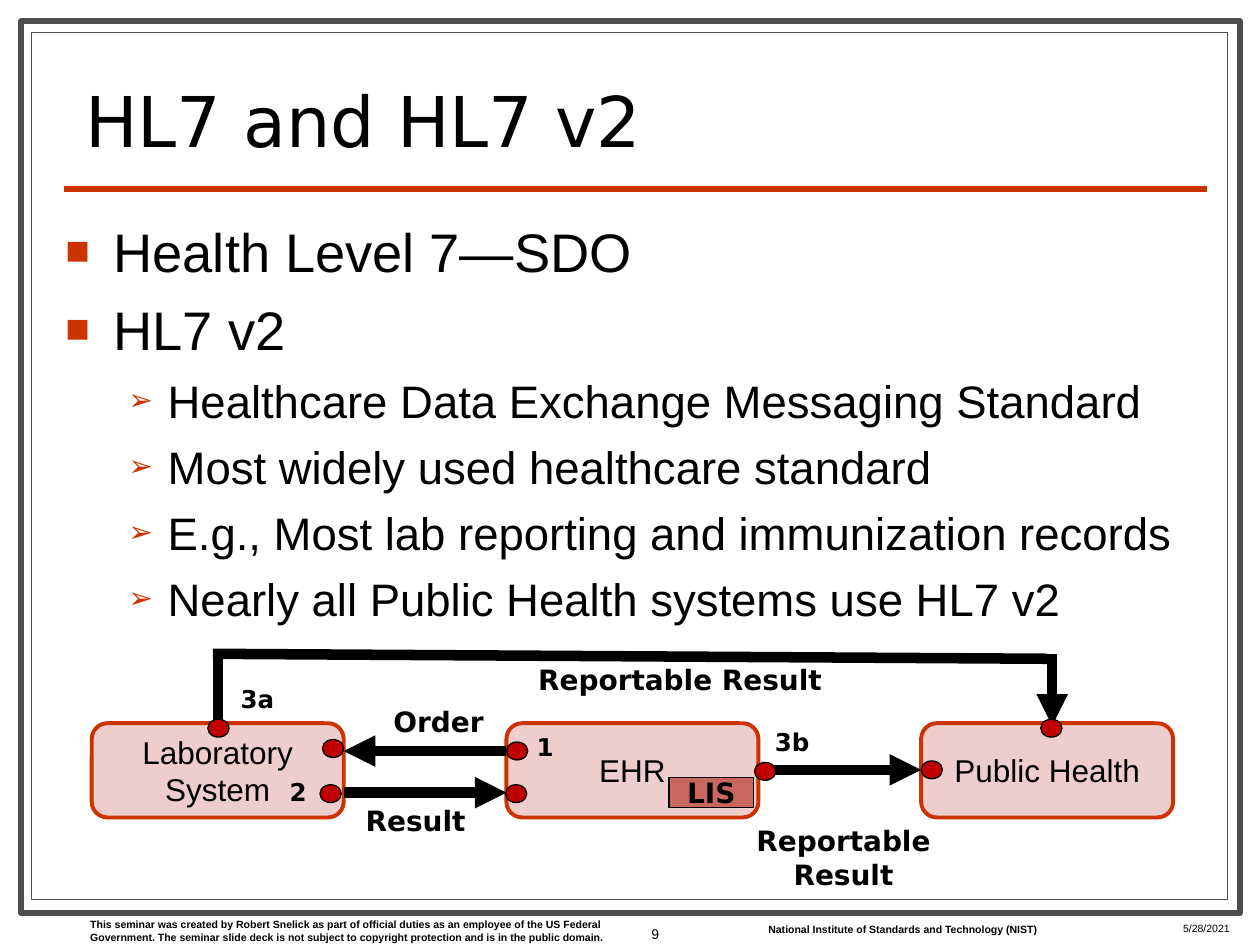
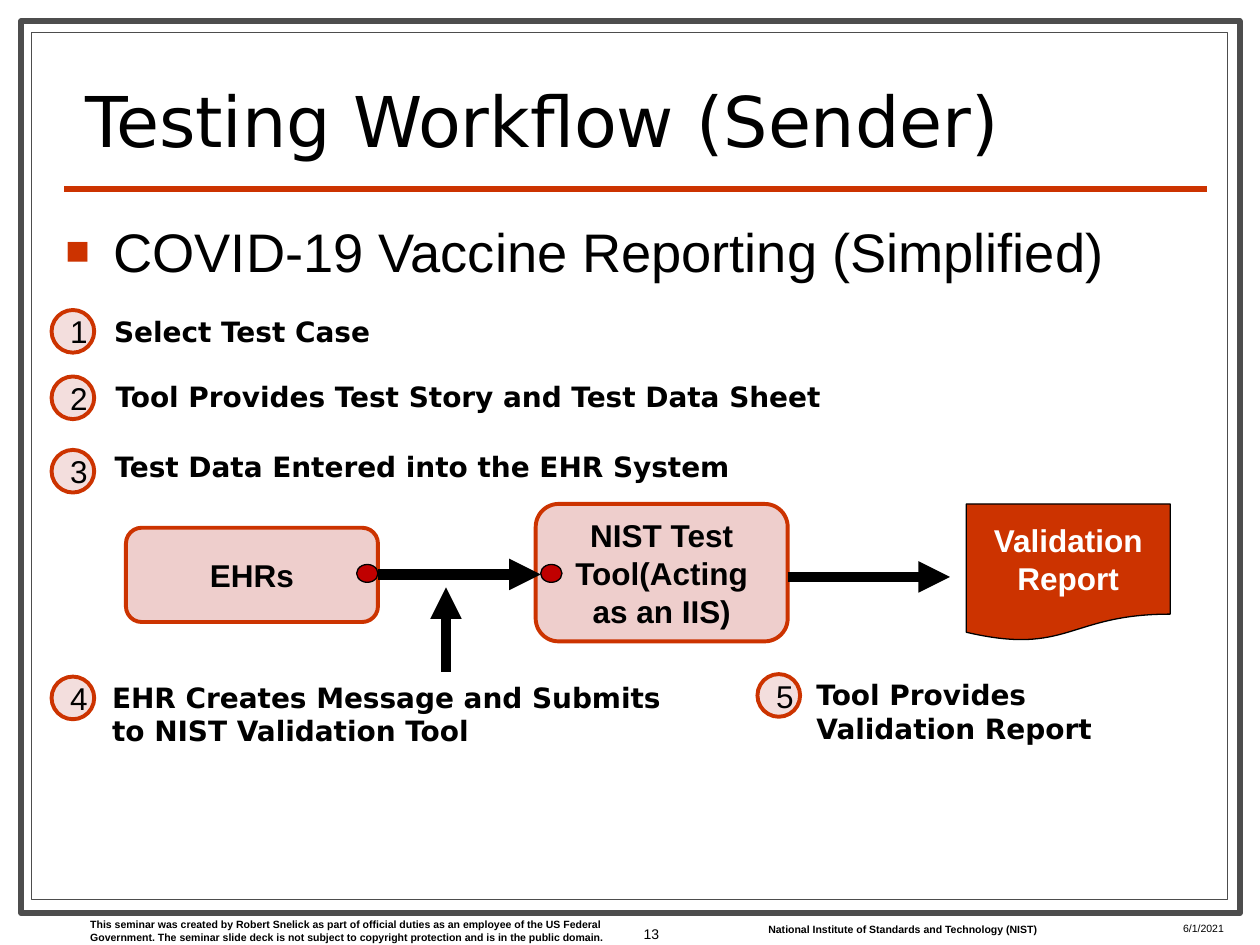
from lxml import etree
from pptx import Presentation
from pptx import util as u
from pptx.dml.color import RGBColor
from pptx.enum import shapes, text
from pptx.oxml import ns

BLACK, WHITE, ACCENT, GREY = "000000", "FFFFFF", "CC3300", "4D4D4D"
NODE, STEP, PORT, INNER = "EECECC", "F3DEDD", "C00000", "C96660"
SANS, DISPLAY = "Arial", "DejaVu Sans"
KIND = shapes.MSO_SHAPE
LEFT, CENTER, RIGHT = text.PP_ALIGN.LEFT, text.PP_ALIGN.CENTER, text.PP_ALIGN.RIGHT
TOP, MIDDLE, BOTTOM = text.MSO_ANCHOR.TOP, text.MSO_ANCHOR.MIDDLE, text.MSO_ANCHOR.BOTTOM
DISCLAIMER = (
    "This seminar was created by Robert Snelick as part of official duties as an employee "
    "of the US Federal Government. The seminar slide deck is not subject to copyright "
    "protection and is in the public domain."
)
INSTITUTE = "National Institute of Standards and Technology (NIST)"
LEVELS = [
    {"bullet": "■", "percent": 75, "margin": 0.97, "hang": 0.97, "size": 31, "before": 7.5},
    {"bullet": "➢", "percent": 65, "margin": 2.06, "hang": 0.79, "size": 26, "before": 6.5},
]


def color(value):
    """Turn a hex string into a colour."""
    return RGBColor.from_string(value)


def lengths(*values):
    """Turn centimetre numbers into lengths."""
    return [u.Cm(value) for value in values]


class Deck:
    """Hold the shared style and the current slide."""

    def __init__(self):
        """Start an empty 4:3 presentation."""
        self.presentation = Presentation()
        self.presentation.slide_width, self.presentation.slide_height = lengths(25.4, 19.05)
        self.slide = None

    def new_slide(self, title, number, date):
        """Add a slide with its frame, title, rule and footer."""
        self.slide = self.presentation.slides.add_slide(self.presentation.slide_layouts[6])
        self.shape(KIND.RECTANGLE, (0.43, 0.43, 24.56, 17.98), WHITE, GREY, 3.5)
        self.shape(KIND.RECTANGLE, (0.64, 0.66, 24.1, 17.48), WHITE, GREY, 0.75)
        self.line((1.3, 3.81), (24.33, 3.81), ACCENT, 3)
        self.label(DISCLAIMER, (1.57, 18.39, 11, 0.76), 6, SANS)
        self.label(INSTITUTE, (15.24, 18.49, 6.05, 0.51), 6, SANS)
        heading = self.label(title, (1.47, 1.07, 22.66, 2.29), 40, bold=False, anchor=BOTTOM)
        heading.text_frame.paragraphs[0].line_spacing = 0.8
        self.label(date, (23.6, 18.47, 1.6, 0.41), 6, SANS, bold=False)
        self.label(number, (12.07, 18.16, 1.47, 1.32), 8, SANS, False, RIGHT, MIDDLE)

    def set_text(self, shape, content, size, font, bold, fill, align, anchor):
        """Fill a shape with one formatted paragraph."""
        frame = shape.text_frame
        frame.word_wrap = True
        frame.vertical_anchor = anchor
        frame.text = content
        paragraph = frame.paragraphs[0]
        paragraph.alignment = align
        self.style(paragraph.runs[0].font, size, font, bold, fill)

    def style(self, run_font, size, font, bold=False, fill=BLACK):
        """Format the font of a run."""
        run_font.size, run_font.name, run_font.bold = u.Pt(size), font, bold
        run_font.color.rgb = color(fill)

    def label(self, content, box, size=16, font=DISPLAY, bold=True, align=LEFT, anchor=TOP):
        """Add a text box."""
        shape = self.slide.shapes.add_textbox(*lengths(*box))
        self.set_text(shape, content, size, font, bold, BLACK, align, anchor)
        return shape

    def marker(self, content, left, top):
        """Add a short message number beside a port."""
        shape = self.label(content, (left, top, 0.51 + 0.35 * len(content), 0.86), 14)
        shape.text_frame.word_wrap = False

    def shape(self, kind, box, fill, line, width, content="", size=18, font=SANS,
              bold=False, ink=BLACK):
        """Add a filled and outlined preset shape."""
        shape = self.slide.shapes.add_shape(kind, *lengths(*box))
        shape.shadow.inherit = False
        shape.fill.solid()
        shape.fill.fore_color.rgb = color(fill)
        shape.line.color.rgb = color(line)
        shape.line.width = u.Pt(width)
        if content:
            self.set_text(shape, content, size, font, bold, ink, CENTER, MIDDLE)

    def node(self, content, left, top, height=1.9, bold=False):
        """Add a rounded system box."""
        self.shape(KIND.ROUNDED_RECTANGLE, (left, top, 5.08, height), NODE, ACCENT, 2.25,
                   content, bold=bold)

    def port(self, left, top):
        """Add a red connection point."""
        self.shape(KIND.OVAL, (left, top, 0.43, 0.36), PORT, BLACK, 0.75)

    def step(self, number, left, top):
        """Add a numbered step circle."""
        self.shape(KIND.OVAL, (left, top, 0.86, 0.86), STEP, ACCENT, 2.25, number)

    def line(self, start, end, fill=BLACK, width=6, arrow=False):
        """Add a straight line, with an arrowhead on request."""
        connector = self.slide.shapes.add_connector(
            shapes.MSO_CONNECTOR.STRAIGHT, *lengths(*start, *end))
        connector.line.color.rgb = color(fill)
        connector.line.width = u.Pt(width)
        properties = connector._element.spPr
        if arrow:
            etree.SubElement(properties.find(ns.qn("a:ln")), ns.qn("a:tailEnd"), type="triangle")
        etree.SubElement(properties, ns.qn("a:effectLst"))

    def arrow(self, start, end):
        """Add a thick message arrow."""
        self.line(start, end, arrow=True)

    def bullets(self, items, height):
        """Add the body list from pairs of level and text."""
        frame = self.slide.shapes.add_textbox(*lengths(1.07, 4.27, 23.29, height)).text_frame
        frame.word_wrap = True
        frame.text = "\n".join(content for _, content in items)
        for index, (paragraph, (level, _)) in enumerate(zip(frame.paragraphs, items)):
            look = LEVELS[level]
            paragraph.level = level
            properties = paragraph._p.get_or_add_pPr()
            properties.set("marL", str(u.Cm(look["margin"])))
            properties.set("indent", str(-u.Cm(look["hang"])))
            tint = etree.SubElement(properties, ns.qn("a:buClr"))
            etree.SubElement(tint, ns.qn("a:srgbClr"), val=ACCENT)
            etree.SubElement(properties, ns.qn("a:buSzPct"), val=str(look["percent"] * 1000))
            etree.SubElement(properties, ns.qn("a:buFont"), typeface=SANS)
            etree.SubElement(properties, ns.qn("a:buChar"), char=look["bullet"])
            if index:
                paragraph.space_before = u.Pt(look["before"])
            self.style(paragraph.runs[0].font, look["size"], SANS)


def standard_slide(deck):
    """Build the slide on the messaging standard."""
    deck.new_slide("HL7 and HL7 v2", "9", "5/28/2021")
    deck.bullets([
        (0, "Health Level 7—SDO"),
        (0, "HL7 v2"),
        (1, "Healthcare Data Exchange Messaging Standard"),
        (1, "Most widely used healthcare standard"),
        (1, "E.g., Most lab reporting and immunization records"),
        (1, "Nearly all Public Health systems use HL7 v2"),
    ], 8.5)
    for index, system in enumerate(["Laboratory System", "EHR", "Public Health"]):
        deck.node(system, 1.85 + 8.36 * index, 14.58)
    for start, end in [
        ((15.29, 15.52), (18.57, 15.52)),
        ((21.21, 13.18), (21.21, 14.63)),
        ((10.21, 15.14), (6.93, 15.14)),
        ((6.93, 15.98), (10.21, 15.98)),
    ]:
        deck.arrow(start, end)
    deck.line((4.29, 13.18), (21.11, 13.28))
    deck.line((4.39, 13.11), (4.39, 14.58))
    for message, box in [
        ("Order", (7.67, 14.07, 2.34, 0.94)),
        ("Result", (7.06, 16.08, 2.64, 0.94)),
        ("Reportable Result", (14.86, 16.48, 4.29, 1.63)),
        ("Reportable Result", (10.08, 13.23, 7.26, 0.94)),
    ]:
        deck.label(message, box, align=CENTER)
    deck.shape(KIND.RECTANGLE, (13.49, 15.67, 1.7, 0.61), INNER, BLACK, 0.75, "LIS", 16,
               DISPLAY, True)
    for left, top in [(6.5, 14.91), (6.45, 15.82), (10.19, 15.82), (15.21, 15.37),
                      (10.21, 14.96), (4.19, 14.5), (20.98, 14.5), (18.57, 15.34)]:
        deck.port(left, top)
    for number, left, top in [("2", 5.59, 15.54), ("1", 10.57, 14.63),
                              ("3b", 15.37, 14.53), ("3a", 4.6, 13.67)]:
        deck.marker(number, left, top)


def workflow_slide(deck):
    """Build the slide on the testing workflow."""
    deck.new_slide("Testing Workflow (Sender)", "13", "6/1/2021")
    deck.bullets([(0, "COVID-19 Vaccine Reporting (Simplified)")], 1.8)
    deck.node("EHRs", 2.54, 10.64, bold=True)
    deck.node("NIST Test Tool(Acting as an IIS)", 10.8, 10.16, 2.77, True)
    deck.arrow((7.62, 11.58), (10.9, 11.58))
    deck.arrow((8.99, 13.54), (8.99, 11.84))
    deck.arrow((15.88, 11.63), (19.15, 11.63))
    for left in (7.19, 10.9):
        deck.port(left, 11.38)
    steps = [
        (1.04, 6.25, "Select Test Case", (2.05, 6.22, 16.71, 0.94)),
        (1.04, 7.59, "Tool Provides Test Story and Test Data Sheet", (2.08, 7.52, 16.71, 0.94)),
        (1.04, 9.07, "Test Data Entered into the EHR System", (2.06, 8.94, 16.71, 0.94)),
        (1.04, 13.64, "EHR Creates Message and Submits to NIST Validation Tool",
         (2.01, 13.59, 12.22, 1.63)),
        (15.27, 13.59, "Tool Provides Validation Report", (16.21, 13.54, 6.81, 1.63)),
    ]
    for number, (left, top, content, box) in enumerate(steps, 1):
        deck.step(str(number), left, top)
        deck.label(content, box)
    deck.shape(KIND.FLOWCHART_DOCUMENT, (19.48, 10.16, 4.11, 2.77), ACCENT, BLACK, 0.75,
               "Validation Report", bold=True, ink=WHITE)


def main():
    """Build and save the presentation."""
    deck = Deck()
    standard_slide(deck)
    workflow_slide(deck)
    deck.presentation.save("out.pptx")


if __name__ == "__main__":
    main()
